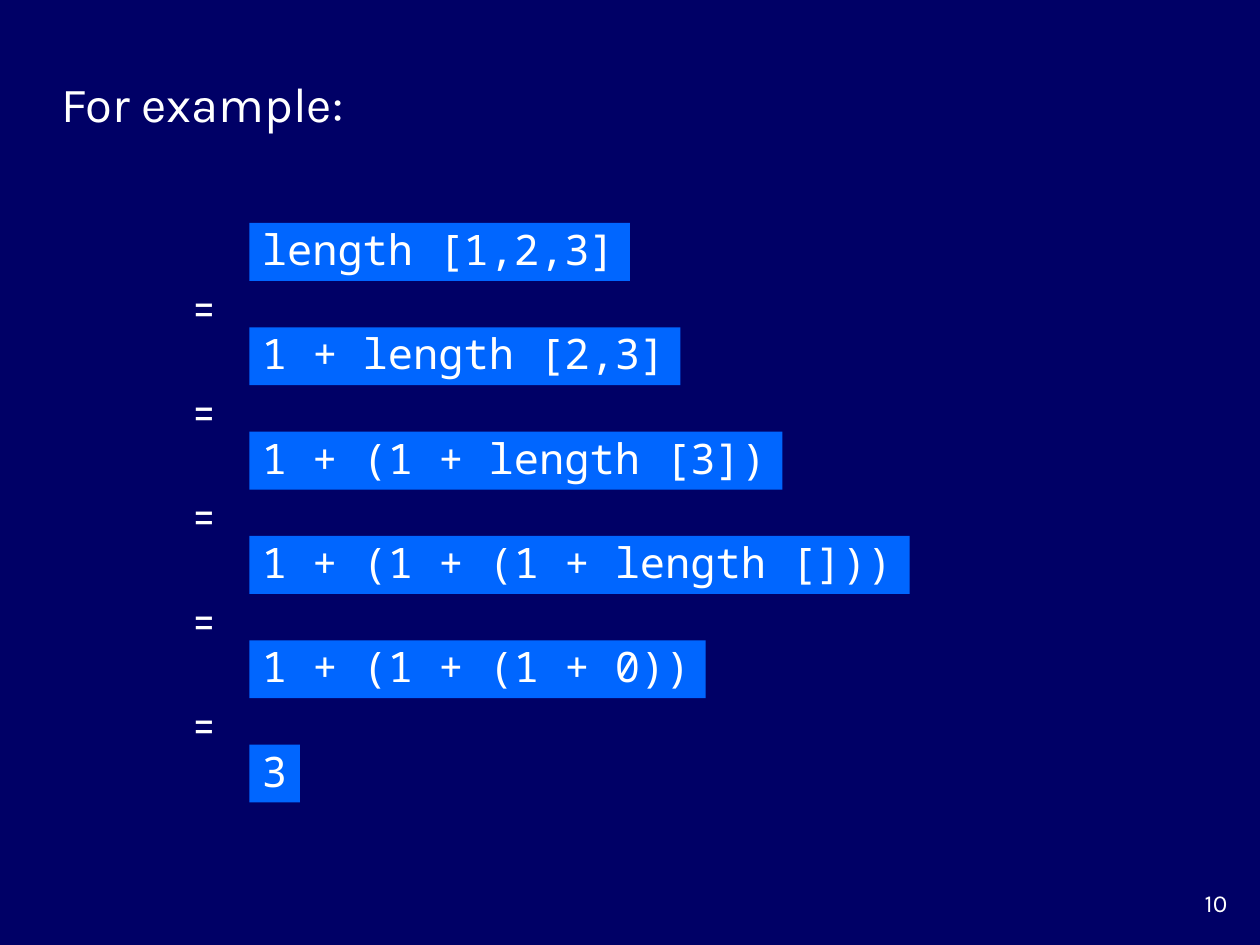
import pptx
import pptx.dml.color
import pptx.enum.shapes
import pptx.enum.text
import pptx.util

Inches = pptx.util.Inches
ALIGN = pptx.enum.text.PP_ALIGN
NAVY = pptx.dml.color.RGBColor(0x00, 0x00, 0x66)
BLUE = pptx.dml.color.RGBColor(0x00, 0x66, 0xFF)
WHITE = pptx.dml.color.RGBColor(0xFF, 0xFF, 0xFF)
TEXT_FONT = "Karla"
CODE_FONT = "Noto Sans Mono"

# Each step of the evaluation, with the width of its box
STEPS = [
    ("length [1,2,3]", 3.02),
    ("1 + length [2,3]", 3.42),
    ("1 + (1 + length [3])", 4.23),
    ("1 + (1 + (1 + length []))", 5.24),
    ("1 + (1 + (1 + 0))", 3.62),
    ("3", 0.4),
]
FIRST_TOP, LAST_TOP = 1.77, 5.91
STEP_GAP = (LAST_TOP - FIRST_TOP) / (len(STEPS) - 1)


def write(box, text, font, size, align=ALIGN.LEFT):
    box.text_frame.text = text
    para = box.text_frame.paragraphs[0]
    para.alignment = align
    span = para.runs[0]
    span.font.name = font
    span.font.size = pptx.util.Pt(size)
    span.font.color.rgb = WHITE
    return para


def fit_to_text(box):
    frame = box.text_frame
    frame.word_wrap = False
    frame.auto_size = pptx.enum.text.MSO_AUTO_SIZE.SHAPE_TO_FIT_TEXT
    frame.vertical_anchor = pptx.enum.text.MSO_ANCHOR.MIDDLE


def add_label(shapes, text, left, top, width, align=ALIGN.LEFT):
    box = shapes.add_textbox(Inches(left), Inches(top), Inches(width), Inches(0.57))
    write(box, text, TEXT_FONT, 28, align)
    fit_to_text(box)


def add_code(shapes, code, top, width):
    box = shapes.add_shape(pptx.enum.shapes.MSO_SHAPE.RECTANGLE,
                           Inches(1.98), Inches(top), Inches(width), Inches(0.46))
    box.shadow.inherit = False
    box.fill.solid()
    box.fill.fore_color.rgb = BLUE
    box.line.fill.background()
    para = write(box, code, CODE_FONT, 24)
    para.line_spacing = 0.9
    fit_to_text(box)


def add_page_number(page, number):
    box = page.shapes.add_textbox(Inches(9.17), Inches(7), Inches(0.67), Inches(0.33))
    box.text_frame.word_wrap = True
    write(box, number, TEXT_FONT, 14, ALIGN.RIGHT)


def main():
    deck = pptx.Presentation()
    deck.slide_width, deck.slide_height = Inches(10), Inches(7.5)
    page = deck.slides.add_slide(deck.slide_layouts[6])
    page.background.fill.solid()
    page.background.fill.fore_color.rgb = NAVY

    # Page number and heading
    add_page_number(page, "10")
    add_label(page.shapes, "For example:", 0.39, 0.53, 2.45)

    # Every step after the first is grouped with its equals sign
    for index, (code, width) in enumerate(STEPS):
        top = FIRST_TOP + index * STEP_GAP
        if index == 0:
            add_code(page.shapes, code, top, width)
        else:
            group = page.shapes.add_group_shape()
            add_code(group.shapes, code, top, width)
            add_label(group.shapes, "=", 1.38, top - 0.48, 0.48, ALIGN.CENTER)

    deck.save("out.pptx")


if __name__ == "__main__":
    main()
